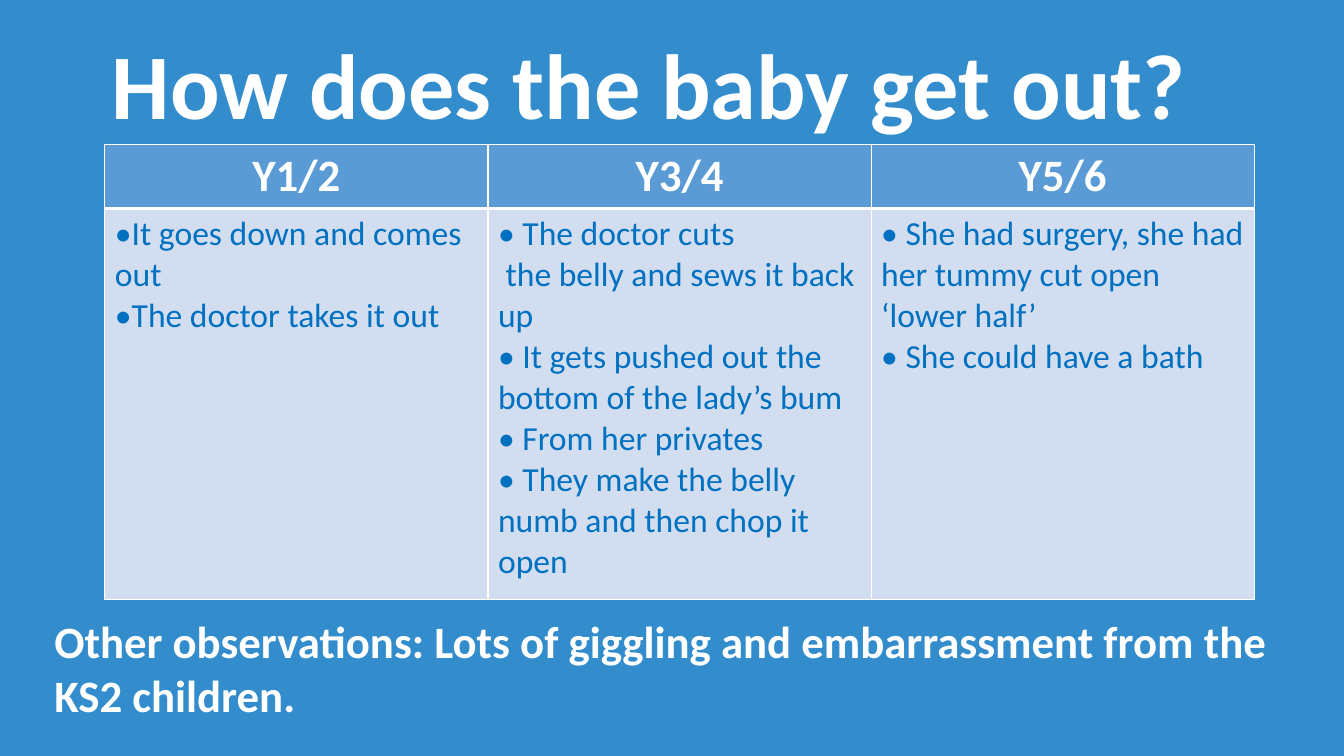
from dataclasses import dataclass

from lxml import etree
from pptx import Presentation
from pptx import util as u
from pptx.dml.color import RGBColor
from pptx.enum import text
from pptx.oxml import ns

BACKGROUND = RGBColor(0x33, 0x8D, 0xCD)
WHITE = RGBColor(0xFF, 0xFF, 0xFF)
BLUE = RGBColor(0x00, 0x70, 0xC0)
HEADER_FILL = RGBColor(0x5B, 0x9B, 0xD5)
BODY_FILL = RGBColor(0xD2, 0xDE, 0xEF)
FONT_NAME = "Calibri"


@dataclass(frozen=True)
class TextStyle:
    size: int
    color: RGBColor
    bold: bool
    alignment: text.PP_ALIGN = text.PP_ALIGN.LEFT
    line_spacing: float = 1.0


@dataclass(frozen=True)
class TextBlock:
    left: float
    top: float
    width: float
    height: float
    content: str
    style: TextStyle
    anchor: text.MSO_ANCHOR


@dataclass(frozen=True)
class YearGroup:
    heading: str
    answers: tuple[str, ...]


TITLE_STYLE = TextStyle(66, WHITE, True, text.PP_ALIGN.CENTER, 0.9)
HEADER_STYLE = TextStyle(32, WHITE, True, text.PP_ALIGN.CENTER)
ANSWER_STYLE = TextStyle(24, BLUE, False)
OBSERVATION_STYLE = TextStyle(32, WHITE, True)

TEXT_BLOCKS = (
    TextBlock(0.44, 0.16, 12, 1.45, "How does the baby get out?",
              TITLE_STYLE, text.MSO_ANCHOR.MIDDLE),
    TextBlock(0.44, 6.04, 12.44, 1.18,
              "Other observations: Lots of giggling and embarrassment from the KS2 children.",
              OBSERVATION_STYLE, text.MSO_ANCHOR.TOP),
)

YEAR_GROUPS = (
    YearGroup("Y1/2", ("•It goes down and comes out", "•The doctor takes it out")),
    YearGroup("Y3/4", (
        "• The doctor cuts",
        " the belly and sews it back up",
        "• It gets pushed out the bottom of the lady’s bum",
        "• From her privates",
        "• They make the belly numb and then chop it open",
    )),
    YearGroup("Y5/6", (
        "• She had surgery, she had her tummy cut open ‘lower half’",
        "• She could have a bath",
    )),
)

COLUMN_WIDTH = 3.8
ROW_HEIGHTS = (0.64, 3.88)


def write_paragraphs(frame, lines: tuple[str, ...], style: TextStyle) -> None:
    frame.text = "\n".join(lines)
    font_format = {"name": FONT_NAME, "size": u.Pt(style.size), "bold": style.bold}
    for paragraph in frame.paragraphs:
        paragraph.alignment = style.alignment
        paragraph.line_spacing = style.line_spacing
        font = paragraph.runs[0].font
        for name, value in font_format.items():
            setattr(font, name, value)
        font.color.rgb = style.color


def add_text_block(slide, block: TextBlock) -> None:
    shape = slide.shapes.add_textbox(
        *map(u.Inches, (block.left, block.top, block.width, block.height)))
    frame = shape.text_frame
    frame_format = {"word_wrap": True, "vertical_anchor": block.anchor}
    for name, value in frame_format.items():
        setattr(frame, name, value)
    write_paragraphs(frame, (block.content,), block.style)


def set_borders(cell, widths: dict[str, float]) -> None:
    properties = cell._tc.get_or_add_tcPr()
    for position, (edge, width) in enumerate(widths.items()):
        line = etree.Element(ns.qn(f"a:{edge}"), w=str(u.Pt(width)))
        fill = etree.SubElement(line, ns.qn("a:solidFill"))
        etree.SubElement(fill, ns.qn("a:srgbClr"), val=str(WHITE))
        properties.insert(position, line)


def fill_cell(cell, lines: tuple[str, ...], style: TextStyle, color: RGBColor,
              top: float, bottom: float) -> None:
    write_paragraphs(cell.text_frame, lines, style)
    cell.fill.solid()
    cell.fill.fore_color.rgb = color
    set_borders(cell, {"lnL": 1, "lnR": 1, "lnT": top, "lnB": bottom})


def add_answer_table(slide) -> None:
    table = slide.shapes.add_table(
        len(ROW_HEIGHTS), len(YEAR_GROUPS), u.Inches(1.04), u.Inches(1.43),
        u.Inches(COLUMN_WIDTH * len(YEAR_GROUPS)), u.Inches(sum(ROW_HEIGHTS))).table
    for row, height in zip(table.rows, ROW_HEIGHTS):
        row.height = u.Inches(height)
    for index, group in enumerate(YEAR_GROUPS):
        table.columns[index].width = u.Inches(COLUMN_WIDTH)
        fill_cell(table.cell(0, index), (group.heading,), HEADER_STYLE, HEADER_FILL, 1, 3)
        fill_cell(table.cell(1, index), group.answers, ANSWER_STYLE, BODY_FILL, 3, 1)


def main() -> None:
    presentation = Presentation()
    presentation.slide_width = u.Inches(13.33)
    presentation.slide_height = u.Inches(7.5)
    slide = presentation.slides.add_slide(presentation.slide_layouts[6])
    slide.background.fill.solid()
    slide.background.fill.fore_color.rgb = BACKGROUND
    title, observation = TEXT_BLOCKS
    add_text_block(slide, title)
    add_answer_table(slide)
    add_text_block(slide, observation)
    presentation.save("out.pptx")


if __name__ == "__main__":
    main()
